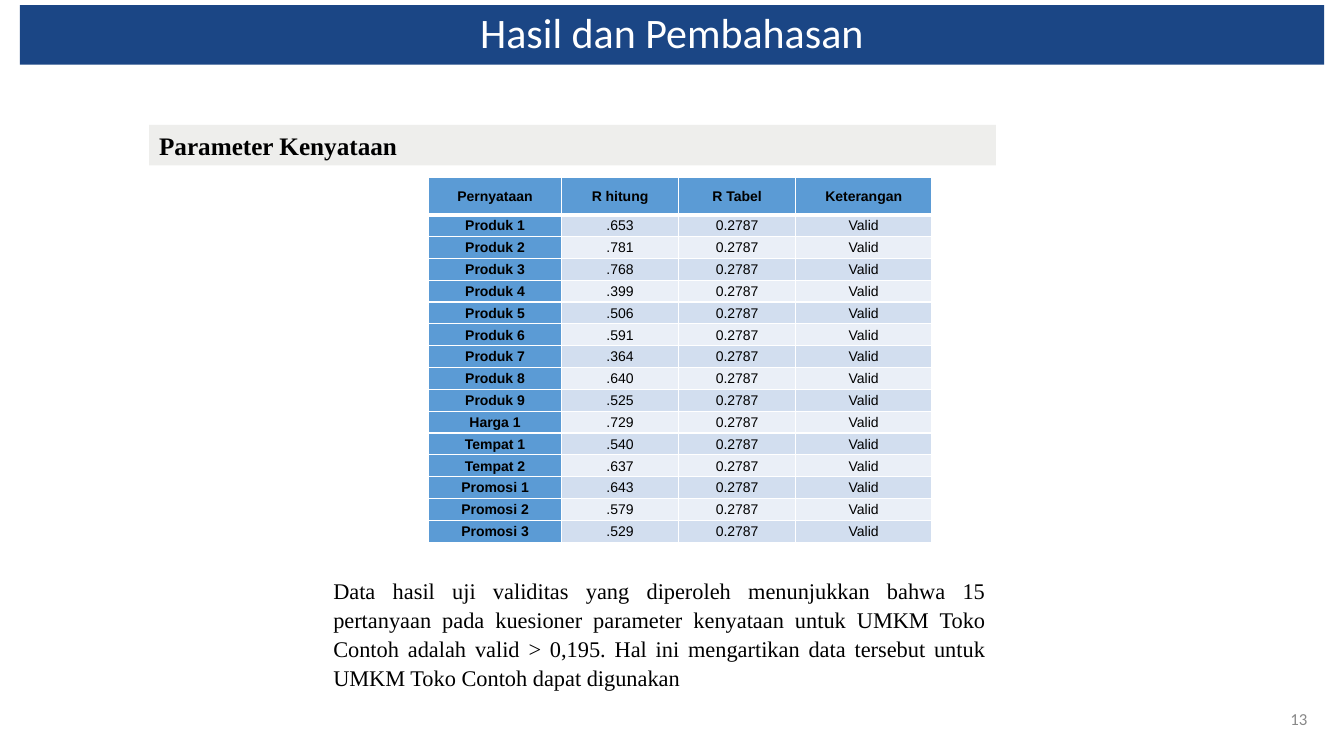
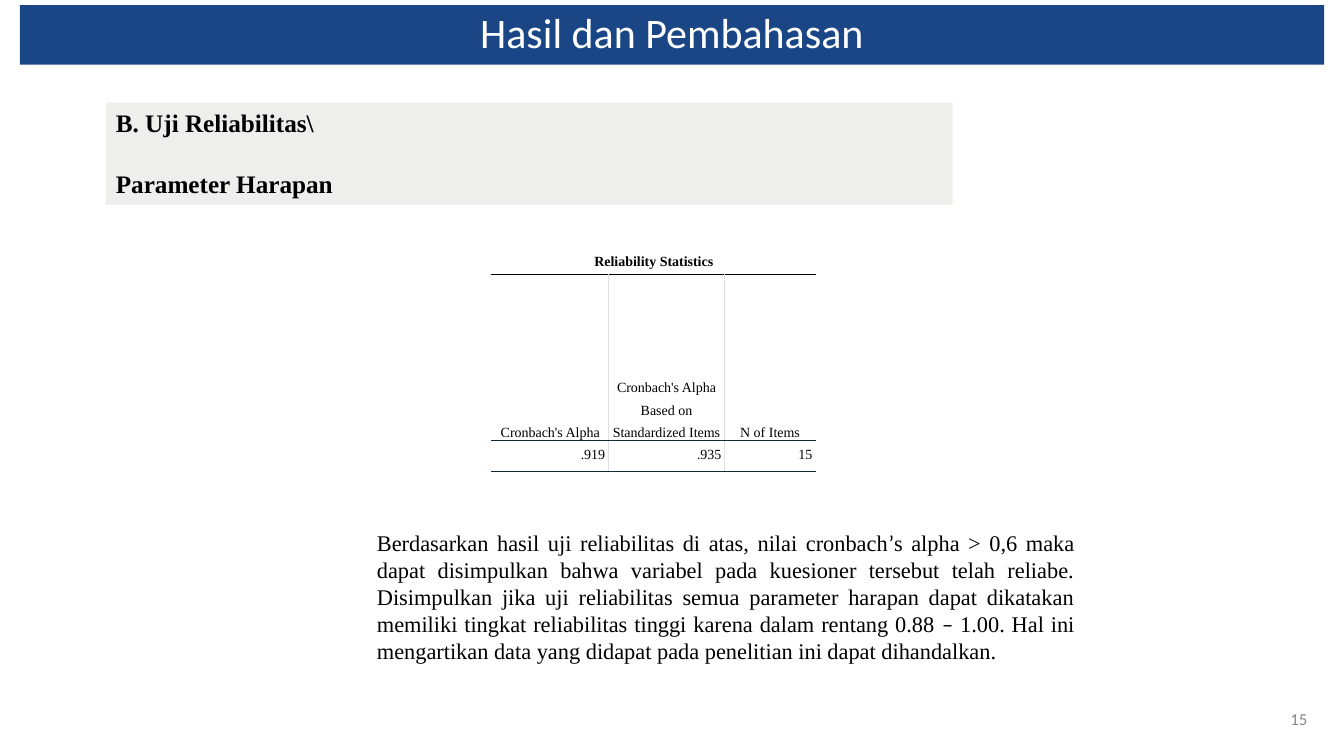
import pptx
import pptx.dml.color
import pptx.enum.shapes
import pptx.enum.text
import pptx.oxml
import pptx.oxml.ns
import pptx.util

Cm, Pt = pptx.util.Cm, pptx.util.Pt
rgb = pptx.dml.color.RGBColor.from_string
ALIGN = pptx.enum.text.PP_ALIGN
ANCHOR = pptx.enum.text.MSO_ANCHOR
RECT = pptx.enum.shapes.MSO_SHAPE.RECTANGLE

HUE = {
    "navy": "1B4685", "gray": "EEEEEC", "white": "FFFFFF", "black": "000000",
    "ink": "010205", "page": "888888", "blue": "5B9BD5", "odd": "D2DEEF",
    "even": "EAEFF7", "line": "152935", "rule": "E0E0E0",
}
MID = {"vertical_anchor": ANCHOR.MIDDLE, "word_wrap": True}
TOP = {"vertical_anchor": ANCHOR.TOP, "word_wrap": True}
SLIM = {"margin_left": Cm(0.17), "margin_right": Cm(0.17), "margin_top": 0,
        "margin_bottom": 0, "vertical_anchor": ANCHOR.MIDDLE}
STAT = SLIM | {"margin_left": Cm(0.08), "margin_right": Cm(0.08)}

SERIF = {"name": "Times New Roman", "size": Pt(16), "bold": False}
SMALL = SERIF | {"size": Pt(10)}
HEAD = SERIF | {"size": Pt(18), "bold": True}
ARIAL = {"name": "Arial", "size": Pt(10), "bold": False}
TITLE = {"name": "Calibri", "size": Pt(30)}
PAGE = {"name": "Calibri", "size": Pt(12)}


def put(box, texts, hue, font, para, hold):
    """Fill a text frame or cell; a list of runs alternates font and Calibri."""
    for key, value in hold.items():
        setattr(box, key, value)
    frame = getattr(box, "text_frame", box)
    for n, text in enumerate(texts):
        par = frame.add_paragraph() if n else frame.paragraphs[0]
        for key, value in para.items():
            setattr(par, key, value)
        if n:
            par.space_before = Pt(22)
        for k, part in enumerate([text] if isinstance(text, str) else text):
            run = par.add_run()
            run.text = part
            for key, value in font.items():
                setattr(run.font, key, value)
            if k % 2:
                run.font.name = "Calibri"
            run.font.color.rgb = rgb(HUE[hue])


def dress(cell, fill, lines):
    """Draw cell borders, given as {side: (colour, points)}, then the fill."""
    props = cell._tc.get_or_add_tcPr()
    for side in "LRTB":
        if side in lines:
            hue, size = lines[side]
            props.append(pptx.oxml.parse_xml(
                f'<a:ln{side} {pptx.oxml.ns.nsdecls("a")} w="{Pt(size)}">'
                f'<a:solidFill><a:srgbClr val="{HUE[hue]}"/></a:solidFill>'
                f'</a:ln{side}>'))
    cell.fill.solid()
    cell.fill.fore_color.rgb = rgb(HUE[fill])


deck = pptx.Presentation()
deck.slide_width, deck.slide_height = Cm(33.87), Cm(19.05)

# Band, heading panel, body text and page number of each slide
PAGES = [
    {"page": "13", "panel": (3.76, 3.15, 21.34, 1.02),
     "heads": ["Parameter Kenyataan"],
     "area": (8.15, 14.38, 16.94, 3.15), "space": 1.07,
     "body": "Data hasil uji validitas yang diperoleh menunjukkan bahwa 15 "
             "pertanyaan pada kuesioner parameter kenyataan untuk UMKM "
             "Toko Contoh adalah valid > 0,195. Hal ini mengartikan data "
             "tersebut untuk UMKM Toko Contoh dapat digunakan"},
    {"page": "15", "panel": (2.67, 2.59, 21.34, 2.57),
     "heads": ["B. Uji Reliabilitas\\", "Parameter Harapan"],
     "area": (9.25, 13.21, 18.08, 3.68), "space": 1.0,
     "body": ["Berdasarkan hasil uji reliabilitas di atas, nilai cronbach", "’",
              "s alpha > 0,6 maka dapat disimpulkan bahwa variabel pada "
              "kuesioner tersebut telah reliabe. Disimpulkan jika uji "
              "reliabilitas semua parameter harapan dapat dikatakan memiliki "
              "tingkat reliabilitas tinggi karena dalam rentang 0.88 ", "–",
              " 1.00. Hal ini mengartikan data yang didapat pada penelitian "
              "ini dapat dihandalkan."]},
]
slides = []
for item in PAGES:
    slide = deck.slides.add_slide(deck.slide_layouts[6])
    slides.append(slide)
    blocks = [
        ((0.5, 0.13, 32.87, 1.5), "navy", ["Hasil dan Pembahasan"], "white",
         TITLE, {"alignment": ALIGN.CENTER, "line_spacing": 0.9}, MID),
        (item["panel"], "gray", item["heads"], "black", HEAD,
         {"alignment": ALIGN.JUSTIFY}, TOP),
        (item["area"], None, [item["body"]], "black", SERIF,
         {"alignment": ALIGN.JUSTIFY, "line_spacing": item["space"]}, TOP),
        ((31.75, 17.6, 1.45, 1.02), None, [item["page"]], "page", PAGE,
         {"alignment": ALIGN.RIGHT}, MID),
    ]
    for spot, fill, *words in blocks:
        spot = [Cm(v) for v in spot]
        if fill:
            shape = slide.shapes.add_shape(RECT, *spot)
            shape.shadow.inherit = False
            shape.fill.solid()
            shape.fill.fore_color.rgb = rgb(HUE[fill])
            shape.line.fill.background()
        else:
            shape = slide.shapes.add_textbox(*spot)
        put(shape.text_frame, *words)

# Both tables: place, column widths and row heights
SCORES = [
    ("Produk 1", ".653"), ("Produk 2", ".781"), ("Produk 3", ".768"),
    ("Produk 4", ".399"), ("Produk 5", ".506"), ("Produk 6", ".591"),
    ("Produk 7", ".364"), ("Produk 8", ".640"), ("Produk 9", ".525"),
    ("Harga 1", ".729"), ("Tempat 1", ".540"), ("Tempat 2", ".637"),
    ("Promosi 1", ".643"), ("Promosi 2", ".579"), ("Promosi 3", ".529"),
]
GRIDS = [
    (10.8, 4.47, [3.35, 2.95, 2.95, 3.43], [0.94] + [0.55] * len(SCORES)),
    (12.4, 6.12, [2.93, 2.93, 2.29], [0.79, 4.19, 0.79]),
]
tables = []
for slide, (left, top, wide, high) in zip(slides, GRIDS):
    table = slide.shapes.add_table(
        len(high), len(wide), Cm(left), Cm(top), Cm(sum(wide)), Cm(sum(high))).table
    table.first_row = table.horz_banding = False
    for col, size in zip(table.columns, wide):
        col.width = Cm(size)
    for row, size in zip(table.rows, high):
        row.height = Cm(size)
    tables.append(table)

# Validity table
rows = [("Pernyataan", "R hitung", "R Tabel", "Keterangan")]
rows += [(name, score, "0.2787", "Valid") for name, score in SCORES]
for r, row in enumerate(rows):
    for c, text in enumerate(row):
        cell = tables[0].cell(r, c)
        key = r == 0 or c == 0
        put(cell, [text], "black", ARIAL | {"bold": key},
            {"alignment": ALIGN.CENTER, "line_spacing": 1.07}, SLIM)
        lines = dict.fromkeys("LRTB", ("white", 1))
        if r == 0:
            lines["B"] = ("white", 3)
        elif r == 1:
            lines["T"] = ("white", 3)
        dress(cell, "blue" if key else "odd" if r % 2 else "even", lines)

# Reliability table
STATS = [
    (["Reliability Statistics"], "ink", True, ALIGN.CENTER, ANCHOR.MIDDLE, {}),
    (["Cronbach's Alpha", "Cronbach's Alpha Based on Standardized Items",
      "N of Items"], "black", False, ALIGN.CENTER, ANCHOR.BOTTOM,
     {"T": ("black", 1), "B": ("line", 1)}),
    ([".919", ".935", "15"], "ink", False, ALIGN.RIGHT, ANCHOR.TOP,
     {"T": ("line", 1), "B": ("line", 1)}),
]
tables[1].cell(0, 0).merge(tables[1].cell(0, 2))
for r, (texts, hue, bold, align, anchor, edges) in enumerate(STATS):
    for c in range(3):
        cell = tables[1].cell(r, c)
        lines = dict(edges)
        if r == 0:
            lines["B"] = ("black", 1)
        if r and c > 0:
            lines["L"] = ("rule", 1)
        if r and c < 2:
            lines["R"] = ("rule", 1)
        if c < len(texts):
            put(cell, [texts[c]], hue, SMALL | {"bold": bold},
                {"alignment": align, "line_spacing": Pt(16)},
                STAT | {"vertical_anchor": anchor})
        dress(cell, "white", lines)

deck.save("out.pptx")
